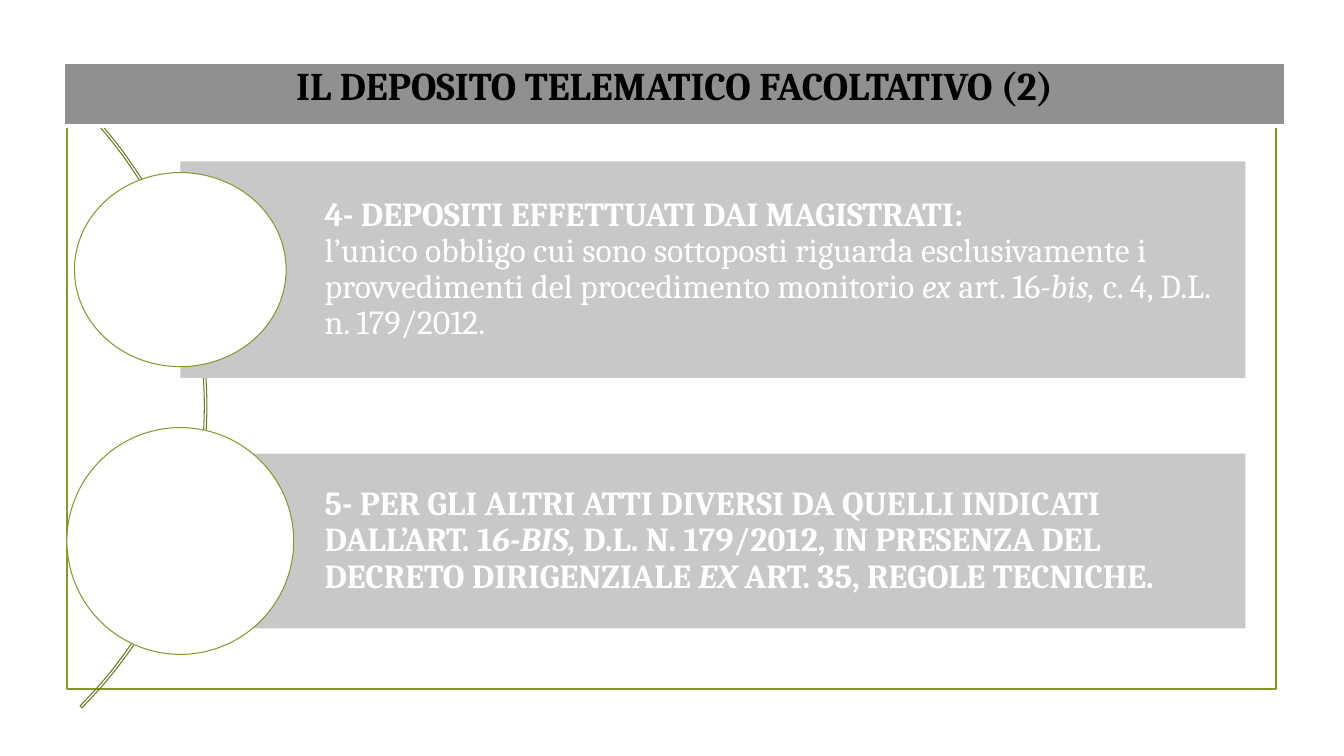
import pptx
import pptx.util
import pptx.dml.color
import pptx.enum.shapes
import pptx.enum.text
import pptx.oxml

Pt = pptx.util.Pt
Shape = pptx.enum.shapes.MSO_SHAPE
Anchor = pptx.enum.text.MSO_ANCHOR
Align = pptx.enum.text.PP_ALIGN


def color(value):
    return pptx.dml.color.RGBColor.from_string(value)


def add_figure(kind, bounds, fill, line, width=0.75):
    figure = page.shapes.add_shape(kind, *[Pt(length) for length in bounds])
    figure.shadow.inherit = False
    if fill:
        figure.fill.solid()
        figure.fill.fore_color.rgb = color(fill)
    else:
        figure.fill.background()
    if line:
        figure.line.color.rgb = color(line)
        figure.line.width = Pt(width)
    else:
        figure.line.fill.background()
    return figure


deck = pptx.Presentation()
deck.slide_width, deck.slide_height = Pt(960), Pt(540)
page = deck.slides.add_slide(deck.slide_layouts[6])

add_figure(Shape.RECTANGLE, (47.7, 48, 864, 444), None, "83992A", 1.25)
arc = add_figure(Shape.BLOCK_ARC, (-462.2, -15.1, 610, 610), None, "697B22")
for index, value in enumerate((189, 27, 0.003)):
    arc.adjustments[index] = value

items = [
    (115.2, 154.8, 151.2, 138.6, [
        [("4- DEPOSITI EFFETTUATI DAI MAGISTRATI:", True, False)],
        [("l’unico obbligo cui sono sottoposti riguarda esclusivamente i provvedimenti "
          "del procedimento monitorio ", False, False),
         ("ex", False, True),
         (" art. 16", False, False),
         ("-bis,", False, True),
         (" c. 4, D.L. n. 179/2012.", False, False)],
    ]),
    (324, 124.8, 162, 162, [
        [("5- PER GLI ALTRI ATTI DIVERSI DA QUELLI INDICATI DALL’ART. 1", True, False),
         ("6-BIS,", True, True),
         (" D.L. N. 179/2012, IN PRESENZA DEL DECRETO DIRIGENZIALE ", True, False),
         ("EX", True, True),
         (" ART. 35, REGOLE TECNICHE.", True, False)],
    ]),
]
bar_left, bar_width = 128.8, 760.8

for top, height, circle_width, circle_height, paragraphs in items:
    bar = add_figure(Shape.RECTANGLE, (bar_left, top, bar_width, height), "C8C8C8", None)
    frame = bar.text_frame
    frame.word_wrap = True
    frame.vertical_anchor = Anchor.MIDDLE
    frame.margin_left = Pt(103)
    frame.margin_top = frame.margin_right = frame.margin_bottom = Pt(5)
    for index, spans in enumerate(paragraphs):
        para = frame.paragraphs[0] if index == 0 else frame.add_paragraph()
        para.alignment = Align.LEFT
        para.line_spacing = 0.9
        para.font.name = "Cambria"
        para.font.size = Pt(24)
        para.font.color.rgb = color("FFFFFF")
        for text, bold, italic in spans:
            span = para.add_run()
            span.text = text
            span.font.bold = bold
            span.font.italic = italic
    middle = top + height / 2
    add_figure(Shape.OVAL, (bar_left - circle_width / 2, middle - circle_height / 2,
                            circle_width, circle_height), "FFFFFF", "83992A")

banner = page.shapes.add_table(1, 1, Pt(45.7), Pt(45), Pt(872), Pt(45)).table
cell = banner.cell(0, 0)
cell.text = "IL DEPOSITO TELEMATICO FACOLTATIVO (2)"
title = cell.text_frame.paragraphs[0]
title.alignment = Align.CENTER
title.line_spacing = 0.9
title.font.name = "Cambria"
title.font.size = Pt(28)
title.font.bold = True
title.font.color.rgb = color("000000")
namespace = "http://schemas.openxmlformats.org/drawingml/2006/main"
for side, width in (("L", 1), ("R", 1), ("T", 1), ("B", 3)):
    cell._tc.get_or_add_tcPr().append(pptx.oxml.parse_xml(
        f'<a:ln{side} xmlns:a="{namespace}" w="{Pt(width)}"><a:solidFill>'
        f'<a:srgbClr val="FFFFFF"/></a:solidFill></a:ln{side}>'))
cell.fill.solid()
cell.fill.fore_color.rgb = color("909090")

deck.save("out.pptx")
